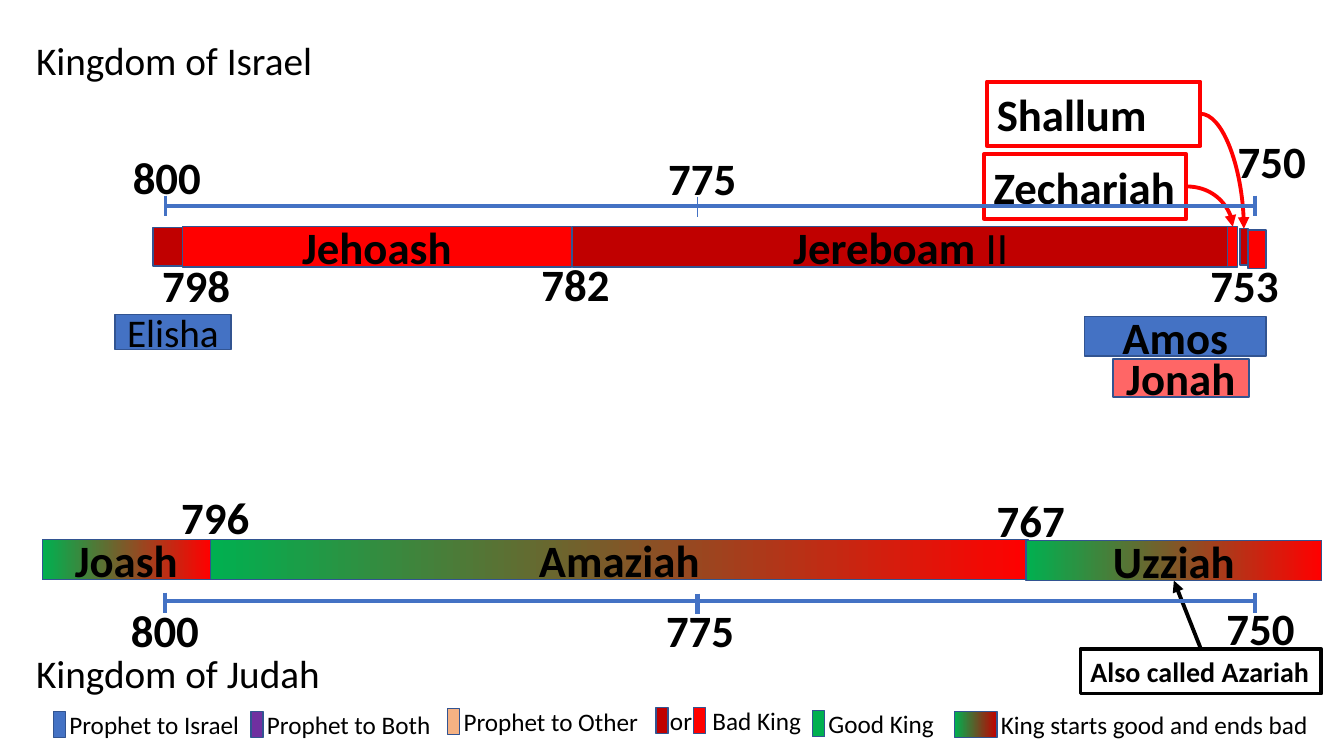
from dataclasses import dataclass

from lxml.etree import SubElement
from pptx import Presentation
from pptx.dml.color import RGBColor
from pptx.enum.shapes import MSO_CONNECTOR, MSO_SHAPE
from pptx.enum.text import MSO_ANCHOR, MSO_AUTO_SIZE, PP_ALIGN
from pptx.oxml.ns import qn
from pptx.util import Pt


@dataclass(frozen=True)
class Theme:
    font: str = "Calibri"
    black: str = "000000"
    blue: str = "4472C4"
    edge: str = "325491"
    red: str = "FF0000"
    dark_red: str = "C00000"
    green: str = "00B050"
    purple: str = "7030A0"
    peach: str = "F4B183"
    name: int = 32
    title: int = 28
    note: int = 20
    key: int = 18


T = Theme()
GOOD_TO_BAD = (T.green, T.red)
YEAR_W, YEAR_H = 64, 46
BAR_H = 28.8


def rgb(color):
    return RGBColor.from_string(color)


def write(s, text, size, bold=False, tail="", **fmt):
    """Put one paragraph in a shape; tail is a second, regular run."""
    tf = s.text_frame
    for key, value in fmt.items():
        setattr(tf, key, value)
    p = tf.paragraphs[0]
    for words, weight in ((text, bold), (tail, False)):
        if words:
            r = p.add_run()
            r.text = words
            r.font.color.rgb = rgb(T.black)
            for key, value in {"name": T.font, "size": Pt(size), "bold": weight}.items():
                setattr(r.font, key, value)
    return p


def label(slide, x, y, w, h, text, size, bold=False, wrap=False):
    s = slide.shapes.add_textbox(Pt(x), Pt(y), Pt(w), Pt(h))
    write(s, text, size, bold, word_wrap=wrap, auto_size=MSO_AUTO_SIZE.SHAPE_TO_FIT_TEXT)


def rect(slide, x, y, w, h, fill=None, edge=T.edge, weight=1):
    """A fill of two colours is a left-to-right gradient."""
    s = slide.shapes.add_shape(MSO_SHAPE.RECTANGLE, Pt(x), Pt(y), Pt(w), Pt(h))
    s.shadow.inherit = False
    if fill is None:
        s.fill.background()
    elif isinstance(fill, tuple):
        s.fill.gradient()
        s.fill.gradient_angle = 0
        for stop, color, position in zip(s.fill.gradient_stops, fill, (0, 1)):
            stop.color.rgb = rgb(color)
            stop.position = position
    else:
        s.fill.solid()
        s.fill.fore_color.rgb = rgb(fill)
    s.line.color.rgb = rgb(edge)
    s.line.width = Pt(weight)
    return s


def bar(slide, x, y, w, h, fill, text="", size=T.name, bold=True, tail=""):
    s = rect(slide, x, y, w, h, fill)
    if text:
        p = write(s, text, size, bold, tail, vertical_anchor=MSO_ANCHOR.MIDDLE)
        p.alignment = PP_ALIGN.CENTER
    return s


def callout(slide, x, y, w, h, text, size, edge, wrap=True):
    s = rect(slide, x, y, w, h, None, edge, 2.75)
    p = write(s, text, size, True, word_wrap=wrap, vertical_anchor=MSO_ANCHOR.TOP,
              auto_size=MSO_AUTO_SIZE.SHAPE_TO_FIT_TEXT)
    p.alignment = PP_ALIGN.LEFT
    return s


def line(slide, x1, y1, x2, y2, color, weight, kind=MSO_CONNECTOR.STRAIGHT):
    c = slide.shapes.add_connector(kind, Pt(x1), Pt(y1), Pt(x2), Pt(y2))
    c.line.color.rgb = rgb(color)
    c.line.width = Pt(weight)
    SubElement(c._element.spPr, qn("a:effectLst"))
    return c


def arrow(slide, source, side, target, target_side, color, curved=False):
    kind = MSO_CONNECTOR.CURVE if curved else MSO_CONNECTOR.STRAIGHT
    c = line(slide, 0, 0, 0, 0, color, 2.75, kind)
    c.begin_connect(source, side)
    c.end_connect(target, target_side)
    if curved:
        c._element.spPr.find(qn("a:prstGeom")).set("prst", "curvedConnector2")
    SubElement(c.line._get_or_add_ln(), qn("a:tailEnd"), type="triangle")


def axis(slide, x, y, weight, ticks):
    """Horizontal time line; ticks are (offset, drop, weight)."""
    line(slide, x, y, x + 777.6, y, T.blue, weight)
    for dx, drop, tick_weight in ticks:
        line(slide, x + dx, y + drop - 7.2, x + dx, y + drop + 7.2, T.blue, tick_weight)


def years(slide, left, top, items):
    for text, dx, dy in items:
        label(slide, left + dx, top + dy, YEAR_W, YEAR_H, text, T.name, True)


def israel(slide, left, top):
    label(slide, left, top, 479.5, 41, "Kingdom of Israel", T.title, wrap=True)
    years(slide, left, top, [
        ("800", 69.1, 81.4), ("775", 451.5, 82.1), ("750", 858.3, 69.9),
        ("798", 90, 158.4), ("782", 361, 157.7), ("753", 838.8, 158.4)])

    # Reigns
    y = top + 139.7
    bar(slide, left + 90.7, y + 0.7, 20.9, 27.4, T.dark_red)
    bar(slide, left + 111.6, y, 277.9, BAR_H, T.red, "Jehoash")
    bar(slide, left + 390.3, y, 468.7, BAR_H, T.dark_red, "Jereboam", tail=" II")
    zechariah = bar(slide, left + 858.3, y, 7.2, BAR_H, T.red)
    shallum = bar(slide, left + 866.9, y + 1.4, 5.8, 25.9, T.dark_red)

    # Callouts for the two short reigns
    for text, dx, dy, w, reign in (("Zechariah", 684, 87.9, 144.7, zechariah),
                                   ("Shallum", 686.2, 36, 152.6, shallum)):
        s = callout(slide, left + dx, top + dy, w, 46, text, T.name, T.red)
        arrow(slide, s, 3, reign, 0, T.red, curved=True)
    bar(slide, left + 872.7, y + 2.2, 13, 27.4, T.red)

    # Prophets
    bar(slide, left + 63.4, top + 202.3, 82.8, 25.2, T.blue, "Elisha", T.title, False)
    bar(slide, left + 756, top + 203.8, 129.6, 28.1, T.blue, "Amos")
    jonah = bar(slide, left + 776.2, top + 234, 97.2, 27.4, T.red, "Jonah")
    color = jonah._element.spPr.find(qn("a:solidFill"))[0]
    SubElement(color, qn("a:alpha"), val="60000")

    axis(slide, left + 99.4, top + 124.6, 2.75,
         [(0, 0, 2.25), (380.1, 0.7, 0.5), (778.3, 0, 3)])


def judah(slide, left, top):
    years(slide, left, top, [
        ("796", 103.7, 0), ("767", 686.2, 2.2),
        ("800", 67.7, 80.7), ("775", 450, 80.7), ("750", 850.3, 79.2)])
    label(slide, left, top + 113.8, 479.5, 41, "Kingdom of Judah", T.title, wrap=True)

    # Reigns
    bar(slide, left + 11.5, top + 38.9, 120.2, BAR_H, GOOD_TO_BAD, "Joash")
    bar(slide, left + 131.8, top + 38.9, 583.9, BAR_H, GOOD_TO_BAD, "Amaziah")
    uzziah = bar(slide, left + 714.3, top + 39.6, 211, BAR_H, GOOD_TO_BAD, "Uzziah")

    # Second name of Uzziah
    s = callout(slide, left + 753.1, top + 117.4, 172.1, 31.7,
                "Also called Azariah", T.note, T.black, wrap=False)
    arrow(slide, s, 0, uzziah, 2, T.black)

    axis(slide, left + 99.4, top + 82.8, 3,
         [(0, 1.5, 3), (380.1, 2.2, 3), (778.3, 1.5, 3)])


def legend(slide, left, top):
    # Swatch x, y, width, fill, then text, its width and its gap from the swatch
    for dx, dy, w, fill, text, text_w, gap in (
            (0, 2.9, 8.6, T.blue, "Prophet to Israel", 136.8, -4.3),
            (141.1, 2.9, 8.6, T.purple, "Prophet to Both", 132.5, -4.3),
            (281.5, 0.7, 8.6, T.peach, "Prophet to Other", 140.4, -4.3),
            (430.5, 0, 8.6, T.dark_red, "or", 30.2, -5.8),
            (457.2, 0, 8.6, T.red, "Bad King", 78.5, -2.2),
            (542.2, 2.2, 8.6, T.green, "Good King", 90.7, -4.3),
            (643.7, 2.9, 30.2, (T.green, T.dark_red),
             "King starts good and ends bad", 236.2, -4.3)):
        rect(slide, left + dx, top + dy, w, 18.7, fill)
        label(slide, left + dx + w + gap, top + dy - 5, text_w, 29, text, T.key)


def main():
    prs = Presentation()
    prs.slide_width, prs.slide_height = Pt(960), Pt(540)
    slide = prs.slides.add_slide(prs.slide_layouts[6])
    israel(slide, 18.7, 22.3)
    judah(slide, 18.7, 346.3)
    legend(slide, 38.2, 505.4)
    prs.save("out.pptx")


if __name__ == "__main__":
    main()
